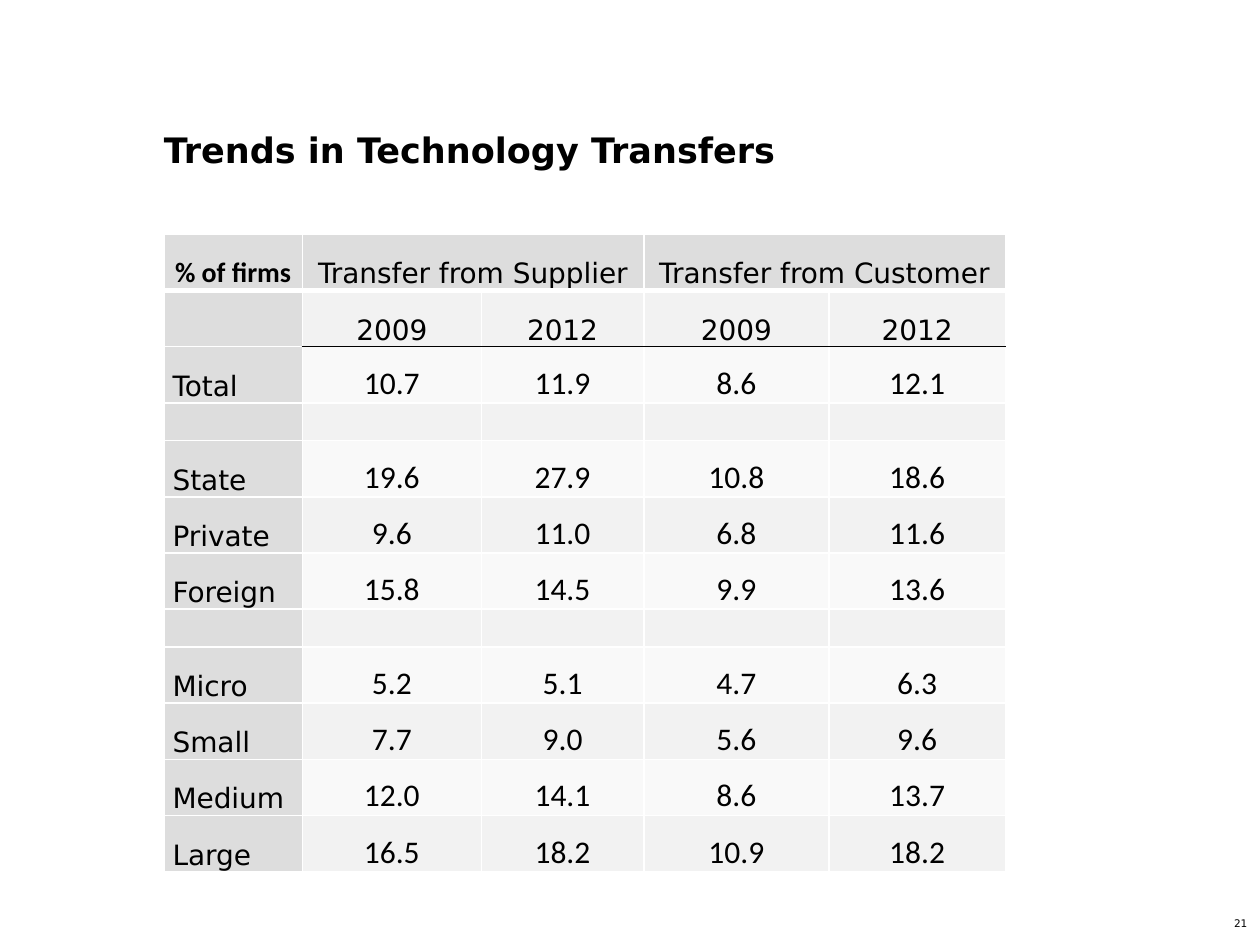
from dataclasses import dataclass

from lxml.etree import SubElement
from pptx import Presentation
from pptx.dml.color import RGBColor
from pptx.enum.text import MSO_ANCHOR, PP_ALIGN
from pptx.oxml.ns import qn
from pptx.util import Inches, Pt


@dataclass(frozen=True)
class Theme:
    """Colours, fonts and type sizes of the slide."""
    ink: str = "000000"
    rule: str = "FFFFFF"
    head: str = "DDDDDD"
    bands: tuple = ("F9F9F9", "F2F2F2")
    label_font: str = "DejaVu Sans"
    value_font: str = "Calibri"
    title: int = 20
    label: int = 16
    value: int = 18
    number: int = 6


T = Theme()
W, H = 10, 7.5
COLS = (1.1, 1.42, 1.29, 1.47, 1.4)
GAP = 0.3
ROWS = (
    ("% of firms", "Transfer from Supplier", "", "Transfer from Customer", ""),
    ("", "2009", "2012", "2009", "2012"),
    ("Total", "10.7", "11.9", "8.6", "12.1"),
    ("",) * 5,
    ("State", "19.6", "27.9", "10.8", "18.6"),
    ("Private", "9.6", "11.0", "6.8", "11.6"),
    ("Foreign", "15.8", "14.5", "9.9", "13.6"),
    ("",) * 5,
    ("Micro", "5.2", "5.1", "4.7", "6.3"),
    ("Small", "7.7", "9.0", "5.6", "9.6"),
    ("Medium", "12.0", "14.1", "8.6", "13.7"),
    ("Large", "16.5", "18.2", "10.9", "18.2"),
)


def write(tf, text, size, font, bold=False, align=PP_ALIGN.LEFT, spacing=None):
    """Add one formatted run to the first paragraph."""
    p = tf.paragraphs[0]
    p.alignment, p.line_spacing = align, spacing
    r = p.add_run()
    r.text = text
    r.font.size, r.font.name, r.font.bold = Pt(size), font, bold
    r.font.color.rgb = RGBColor.from_string(T.ink)


def text_region(s, box, text, size, anchor=MSO_ANCHOR.TOP, **style):
    """Place a text box without margins in the given box."""
    tf = s.shapes.add_textbox(*map(Inches, box)).text_frame
    tf.word_wrap, tf.vertical_anchor = True, anchor
    tf.margin_left = tf.margin_top = tf.margin_right = tf.margin_bottom = 0
    write(tf, text, size, T.label_font, **style)


def edge_style(edge, col):
    """Return colour and width of the horizontal rule above row number edge."""
    if edge == 1:
        return T.rule, 3
    return (T.ink if edge == 2 and col else T.rule), 1


def border(cell, row, col):
    """Draw the four borders of a cell."""
    side = (T.rule, 1)
    edges = (("L", side), ("R", side),
             ("T", edge_style(row, col)), ("B", edge_style(row + 1, col)))
    tcPr = cell._tc.get_or_add_tcPr()
    for i, (name, (color, width)) in enumerate(edges):
        ln = SubElement(tcPr, qn(f"a:ln{name}"), w=str(Pt(width)))
        fill = SubElement(ln, qn("a:solidFill"))
        SubElement(fill, qn("a:srgbClr"), val=color)
        tcPr.insert(i, ln)


def fill_cell(cell, text, row, col):
    """Style one cell by its place in the table and write its text."""
    cell.vertical_anchor = MSO_ANCHOR.BOTTOM
    cell.margin_left = cell.margin_right = Inches(0.07)
    cell.margin_top = cell.margin_bottom = 0
    cell.fill.solid()
    color = T.head if row == 0 or col == 0 else T.bands[row % 2]
    cell.fill.fore_color.rgb = RGBColor.from_string(color)
    border(cell, row, col)
    if text:
        corner, value = row == col == 0, row > 1 and col > 0
        write(cell.text_frame, text, T.value if value else T.label,
              T.value_font if corner or value else T.label_font, corner,
              PP_ALIGN.LEFT if row and not col else PP_ALIGN.CENTER, 1.15)


def transfer_table(s, box):
    """Place the technology transfer table in the given box."""
    x, y, w, h = box
    blanks = sum(not any(cells) for cells in ROWS)
    row_h = (h - blanks * GAP) / (len(ROWS) - blanks)
    table = s.shapes.add_table(len(ROWS), len(COLS),
                               *map(Inches, box)).table
    for column, share in zip(table.columns, COLS):
        column.width = Inches(w * share / sum(COLS))
    for row, cells in enumerate(ROWS):
        table.rows[row].height = Inches(row_h if any(cells) else GAP)
        for col, text in enumerate(cells):
            fill_cell(table.cell(row, col), text, row, col)
    for col in (1, 3):
        table.cell(0, col).merge(table.cell(0, col + 1))


def main():
    """Build and save the slide."""
    prs = Presentation()
    prs.slide_width, prs.slide_height = Inches(W), Inches(H)
    s = prs.slides.add_slide(prs.slide_layouts[6])
    left = 0.13 * W
    text_region(s, (left, 0.09 * H, 0.63 * W, 0.09 * H),
                "Trends in Technology Transfers", T.title,
                MSO_ANCHOR.BOTTOM, bold=True)
    transfer_table(s, (left, 1.86, sum(COLS), 5.06))
    text_region(s, (0.94 * W, 0.97 * H, 0.05 * W, 0.02 * H), "21", T.number,
                align=PP_ALIGN.RIGHT)
    prs.save("out.pptx")


if __name__ == "__main__":
    main()
